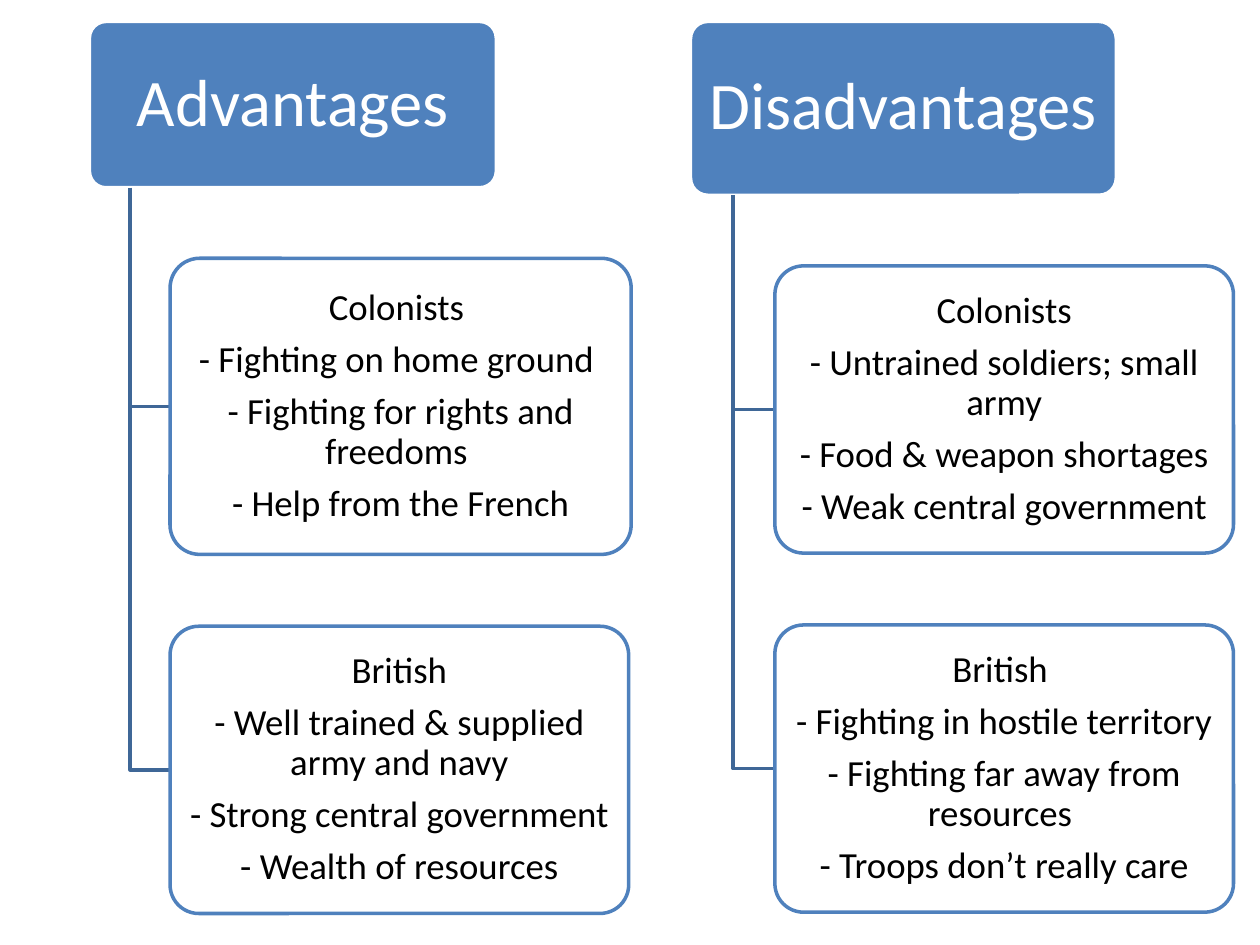
from lxml import etree
from pptx import Presentation
from pptx import util as u
from pptx.dml.color import RGBColor
from pptx.enum import shapes, text
from pptx.oxml.ns import qn


def colour(hex_value):
    return RGBColor.from_string(hex_value)


class Board:
    font = "Calibri"
    blue = "4F81BD"
    branch_blue = "3F6797"
    white = "FFFFFF"
    black = "000000"
    line_width = u.Pt(2)

    def __init__(self, slide):
        self.slide = slide

    def outline(self, shape, hex_value):
        shape.shadow.inherit = False
        shape.line.color.rgb = colour(hex_value)
        shape.line.width = self.line_width

    def panel(self, place, fill, line):
        panel = self.slide.shapes.add_shape(
            shapes.MSO_SHAPE.ROUNDED_RECTANGLE, *map(u.Inches, place))
        panel.adjustments[0] = 0.1
        panel.fill.solid()
        panel.fill.fore_color.rgb = colour(fill)
        self.outline(panel, line)
        return panel

    def label(self, panel, lines, size, hex_value, inset_x, inset_y):
        frame = panel.text_frame
        frame.word_wrap = True
        frame.vertical_anchor = text.MSO_ANCHOR.MIDDLE
        frame.margin_left = frame.margin_right = u.Inches(inset_x)
        frame.margin_top = frame.margin_bottom = u.Inches(inset_y)
        for index, line in enumerate(lines):
            paragraph = frame.add_paragraph() if index else frame.paragraphs[0]
            paragraph.alignment = text.PP_ALIGN.CENTER
            paragraph.line_spacing = 0.9
            paragraph.space_after = u.Pt(size * 0.34)
            run = paragraph.add_run()
            run.text = line
            run.font.name = self.font
            run.font.size = u.Pt(size)
            run.font.color.rgb = colour(hex_value)

    def heading(self, place, title):
        panel = self.panel(place, self.blue, self.white)
        self.label(panel, [title], 38, self.white, 0.08, 0.05)

    def card(self, place, lines):
        panel = self.panel(place, self.white, self.blue)
        solid = panel._element.spPr.find(qn("a:solidFill"))
        tint = solid.find(qn("a:srgbClr"))
        etree.SubElement(tint, qn("a:alpha")).set("val", "90000")
        self.label(panel, lines, 21, self.black, 0.04, 0.03)

    def branch(self, trunk, top, card_left, card_middle):
        builder = self.slide.shapes.build_freeform(
            u.Inches(trunk), u.Inches(top))
        builder.add_line_segments(
            [(u.Inches(trunk), u.Inches(card_middle)),
             (u.Inches(card_left), u.Inches(card_middle))], close=False)
        elbow = builder.convert_to_shape()
        elbow.fill.background()
        self.outline(elbow, self.branch_blue)

    def column(self, title, place, cards):
        left, top, width, height = place
        self.heading(place, title)
        trunk = left + width / 10
        for card_place, lines in cards:
            card_left, card_top, _, card_height = card_place
            self.branch(trunk, top + height, card_left,
                        card_top + card_height / 2)
            self.card(card_place, lines)


COLUMNS = [
    ("Advantages", (0.71, 0.17, 3.23, 1.32), [
        ((1.35, 2.05, 3.66, 2.35), [
            "Colonists ",
            "- Fighting on home ground ",
            "- Fighting for rights and freedoms ",
            "- Help from the French"]),
        ((1.35, 4.97, 3.64, 2.28), [
            "British",
            "- Well trained & supplied army and navy",
            "- Strong central government",
            "- Wealth of resources"]),
    ]),
    ("Disadvantages", (5.48, 0.17, 3.38, 1.38), [
        ((6.15, 2.11, 3.64, 2.28), [
            "Colonists",
            "- Untrained soldiers; small army",
            "- Food & weapon shortages",
            "- Weak central government"]),
        ((6.15, 4.96, 3.64, 2.28), [
            "British ",
            "- Fighting in hostile territory",
            "- Fighting far away from resources ",
            "- Troops don’t really care"]),
    ]),
]


def main():
    deck = Presentation()
    deck.slide_width = u.Inches(10)
    deck.slide_height = u.Inches(7.5)
    board = Board(deck.slides.add_slide(deck.slide_layouts[6]))
    for title, place, cards in COLUMNS:
        board.column(title, place, cards)
    deck.save("out.pptx")


if __name__ == "__main__":
    main()
